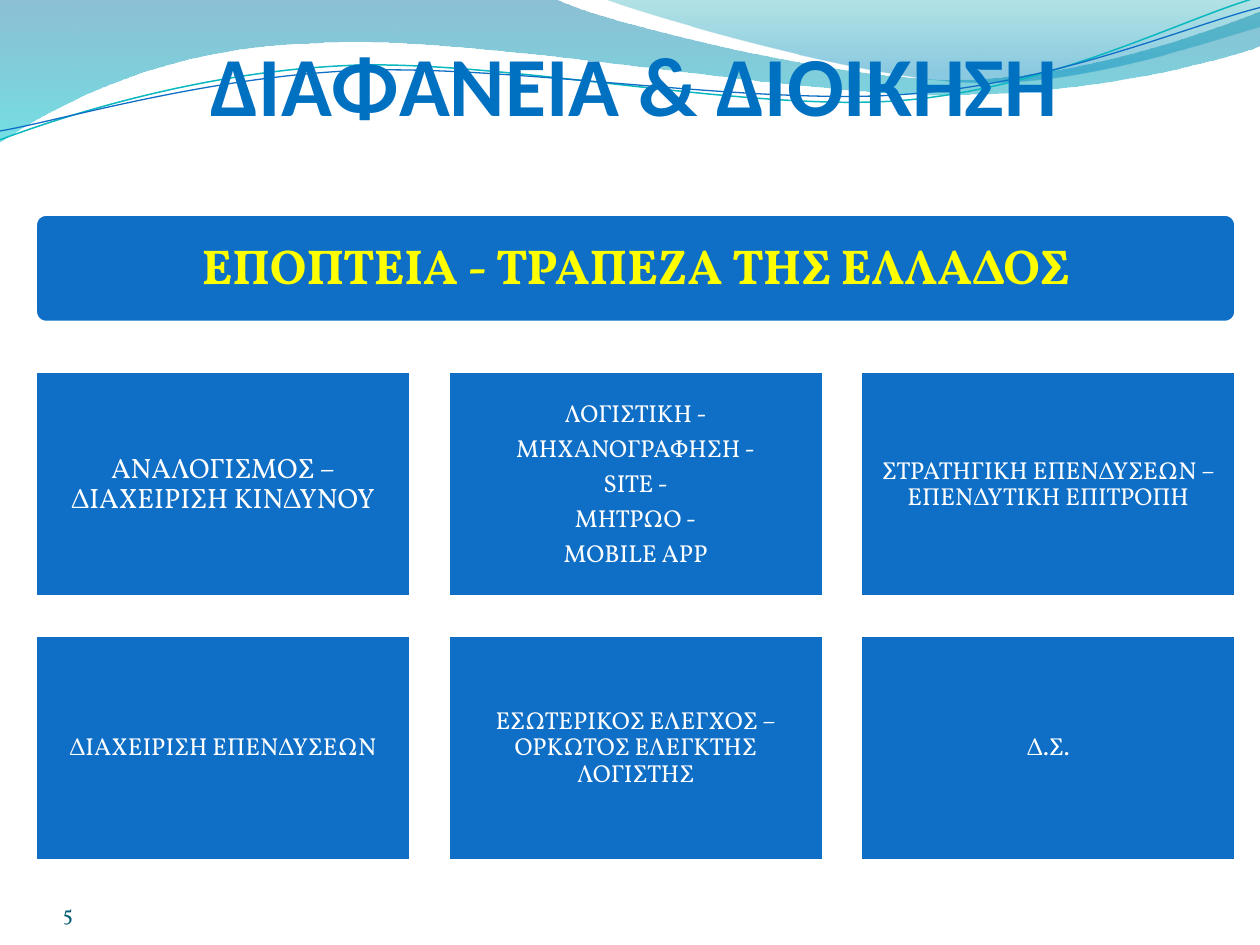
"""Build the governance slide: a wave header, a supervision bar and a grid of six units."""
from lxml.etree import SubElement
from pptx import Presentation
from pptx.dml.color import RGBColor
from pptx.enum.shapes import MSO_SHAPE
from pptx.enum.text import MSO_ANCHOR, PP_ALIGN
from pptx.oxml.ns import qn
from pptx.util import Inches, Pt

BLUE = RGBColor(0x0F, 0x6F, 0xC6)
TITLE_BLUE = RGBColor(0x00, 0x70, 0xC0)
NUMBER_BLUE = RGBColor(0x04, 0x5D, 0x75)
TEAL = RGBColor(0x0A, 0xB8, 0xBF)
DEEP_BLUE = RGBColor(0x00, 0x74, 0xA1)
CYAN = RGBColor(0x00, 0xC6, 0xCF)
SEA_GREEN = RGBColor(0x00, 0xA1, 0xA9)
SKY_BLUE = RGBColor(0x00, 0x8B, 0xBF)
WHITE = RGBColor(0xFF, 0xFF, 0xFF)
YELLOW = RGBColor(0xFF, 0xFF, 0x00)


def add_wave(shapes, start, segments, close):
    points = [(Inches(x), Inches(y)) for segment in segments for x, y in zip(segment[::2], segment[1::2])]
    builder = shapes.build_freeform(Inches(start[0]), Inches(start[1]))
    builder.add_line_segments(points, close=close)
    wave = builder.convert_to_shape()
    wave.shadow.inherit = False
    strokes = iter(list(wave.element.iter(qn("a:lnTo"))))
    for segment in segments:
        group = [next(strokes) for _ in segment[::2]]
        if len(group) == 3:
            curve = group[0].makeelement(qn("a:cubicBezTo"))
            group[0].addprevious(curve)
            for stroke in group:
                curve.append(stroke[0])
                stroke.getparent().remove(stroke)
    return wave


def write_lines(frame, lines, size, color, font="Vollkorn", bold=False, inset=0.0,
                align=PP_ALIGN.CENTER, anchor=MSO_ANCHOR.MIDDLE):
    frame.text = "\n".join(lines)
    frame.word_wrap = True
    frame.vertical_anchor = anchor
    frame.margin_left = frame.margin_right = Inches(inset)
    frame.margin_top = frame.margin_bottom = Inches(inset)
    for paragraph in frame.paragraphs:
        paragraph.alignment = align
        for run in paragraph.runs:
            run.font.size = Pt(size)
            run.font.name = font
            run.font.bold = bold
            run.font.color.rgb = color


presentation = Presentation()
presentation.slide_width, presentation.slide_height = Inches(10), Inches(7.5)
slide = presentation.slides.add_slide(presentation.slide_layouts[5])
shapes = slide.shapes
slide.background.fill.solid()
slide.background.fill.fore_color.rgb = WHITE

bands = [
    ((0, 0), [(4.4, -0.01), (4.76, 0.17, 6.64, 0.63, 7.58, 0.63), (8.53, 0.63, 9.58, 0.26, 10, 0.09),
              (10.01, 0.36), (9.83, 0.44, 8.7, 0.76, 7.46, 0.75), (6.22, 0.75, 3.82, 0.28, 2.57, 0.34),
              (1.29, 0.36, 0.46, 0.83, -0.01, 1.13)],
     [(0, DEEP_BLUE, 45), (1, CYAN, 55)]),
    ((4.79, -0.01), [(5.09, 0.11, 6.82, 0.62, 7.69, 0.65), (8.56, 0.69, 9.61, 0.32, 10, 0.21), (10, 0)],
     [(0, SEA_GREEN, 30), (0.8, SKY_BLUE, 45)]),
]
for start, segments, stops in bands:
    band = add_wave(shapes, start, segments, True)
    band.line.fill.background()
    band.fill.gradient()
    band.fill.gradient_angle = 270
    for stop, (position, color, _) in zip(band.fill.gradient_stops, stops):
        stop.position = position
        stop.color.rgb = color
    for tint, (_, _, opacity) in zip(band.element.spPr.iter(qn("a:srgbClr")), stops):
        SubElement(tint, qn("a:alpha"), val=str(opacity * 1000))

ripples = [
    ((0, 1.11), [(0.48, 0.93, 1.58, 0.57, 2.77, 0.52), (3.95, 0.47, 5.93, 0.89, 7.13, 0.8),
                 (8.33, 0.71, 9.38, 0.15, 9.98, -0.02)], TEAL, 0.85),
    ((0, 1.04), [(0.47, 0.96, 1.64, 0.61, 2.83, 0.56), (4.03, 0.51, 5.97, 0.84, 7.17, 0.75),
                 (8.36, 0.67, 9.41, 0.21, 10, 0.06)], BLUE, 0.75),
]
for start, segments, color, weight in ripples:
    ripple = add_wave(shapes, start, segments, False)
    ripple.fill.background()
    ripple.line.color.rgb = color
    ripple.line.width = Pt(weight)

title = shapes.title
title.left, title.top, title.width, title.height = Inches(0.58), Inches(0.19), Inches(8.91), Inches(0.87)
write_lines(title.text_frame, ["ΔΙΑΦΑΝΕΙΑ & ΔΙΟΙΚΗΣΗ"], 48, TITLE_BLUE, "Calibri", True,
            anchor=MSO_ANCHOR.BOTTOM)
title.text_frame.margin_top = Inches(0.05)
title.element.getparent().append(title.element)

page_number = shapes.add_textbox(Inches(0.5), Inches(6.95), Inches(2.33), Inches(0.4))
write_lines(page_number.text_frame, ["5"], 12, NUMBER_BLUE, align=PP_ALIGN.LEFT, anchor=MSO_ANCHOR.BOTTOM)

grid_left, grid_top, grid_width = 0.28, 2.95, 9.53
unit_width, unit_height, row_pitch = 2.98, 1.79, 2.09
column_pitch = (grid_width - unit_width) / 2
units = [
    [["ΑΝΑΛΟΓΙΣΜΟΣ – ΔΙΑΧΕΙΡΙΣΗ ΚΙΝΔΥΝΟΥ"],
     ["ΛΟΓΙΣΤΙΚΗ -", "ΜΗΧΑΝΟΓΡΑΦΗΣΗ -", "SITE -", "ΜΗΤΡΩΟ -", "MOBILE APP"],
     ["ΣΤΡΑΤΗΓΙΚΗ ΕΠΕΝΔΥΣΕΩN – ΕΠΕΝΔΥΤΙΚΗ ΕΠΙΤΡΟΠΗ"]],
    [["ΔΙΑΧΕΙΡΙΣΗ ΕΠΕΝΔΥΣΕΩΝ"],
     ["ΕΣΩΤΕΡΙΚΟΣ ΕΛΕΓΧΟΣ – ΟΡΚΩΤΟΣ ΕΛΕΓΚΤΗΣ ΛΟΓΙΣΤΗΣ"],
     ["Δ.Σ."]],
]
panels = [(MSO_SHAPE.RECTANGLE, grid_left + column * column_pitch, grid_top + row * row_pitch,
           unit_width, unit_height, lines, 16 if row == column == 0 else 14, WHITE, False, 0.06)
          for row, row_units in enumerate(units) for column, lines in enumerate(row_units)]
panels.append((MSO_SHAPE.ROUNDED_RECTANGLE, grid_left, 1.7, grid_width, 0.86,
               ["ΕΠΟΠΤΕΙΑ - ΤΡΑΠΕΖΑ ΤΗΣ ΕΛΛΑΔΟΣ"], 28, YELLOW, True, 0.12))
for outline, left, top, width, height, lines, size, color, bold, inset in panels:
    panel = shapes.add_shape(outline, Inches(left), Inches(top), Inches(width), Inches(height))
    panel.shadow.inherit = False
    panel.fill.solid()
    panel.fill.fore_color.rgb = BLUE
    panel.line.color.rgb = WHITE
    panel.line.width = Pt(2)
    if outline == MSO_SHAPE.ROUNDED_RECTANGLE:
        panel.adjustments[0] = 0.1
    write_lines(panel.text_frame, lines, size, color, bold=bold, inset=inset)
    for paragraph in panel.text_frame.paragraphs:
        paragraph.line_spacing = 0.9
        paragraph.space_after = Pt(0.35 * size)

presentation.save("out.pptx")
